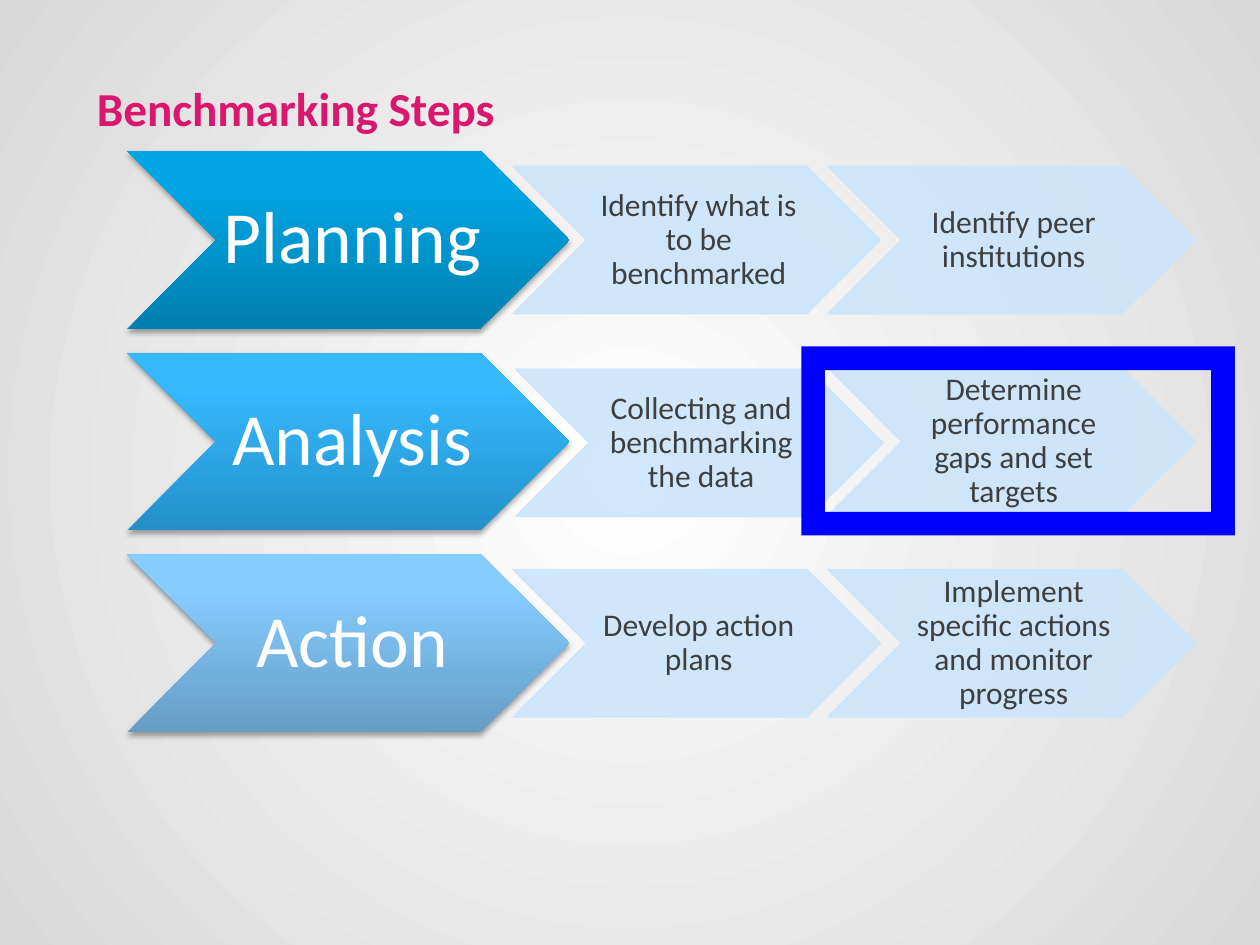
"""Builds the Benchmarking Steps slide: three phases, each leading to two steps."""
from lxml import etree
from pptx import Presentation
from pptx.dml.color import RGBColor
from pptx.enum.shapes import MSO_SHAPE
from pptx.enum.text import MSO_ANCHOR, PP_ALIGN
from pptx.oxml import parse_xml
from pptx.oxml.ns import nsdecls, qn
from pptx.util import Inches, Pt

CHEVRON, FRAME = MSO_SHAPE.CHEVRON, MSO_SHAPE.FRAME
MIDDLE = MSO_ANCHOR.MIDDLE
LEFT, CENTER = PP_ALIGN.LEFT, PP_ALIGN.CENTER

THEME = {
    "font": "Calibri",
    "title": {"size": Pt(27), "color": "D9176E", "bold": True, "wrap": True},
    "phase": {"size": Pt(42), "color": "FFFFFF", "bold": False, "wrap": False},
    "step": {"size": Pt(18), "color": "3F3F3F", "bold": False, "wrap": True},
    "step_fill": "CCE5FB",
    "frame": "0000FF",
    "background": [(0, "FFFFFF"), (100, "D9D9D9")],
}

PHASES = [
    ("Planning", ("007FAF", "00A5E4", "00A6E5"),
     [("Identify what is to be benchmarked", 0, 0), ("Identify peer institutions", 0, 0)]),
    ("Analysis", ("2390C9", "35B9FF", "36BAFF"),
     [("Collecting and benchmarking the data", 0.02, 0.01),
      ("Determine performance gaps and set targets", 0, 0)]),
    ("Action", ("669DC4", "85CCFF", "86CDFF"),
     [("Develop action plans", 0, 0),
      ("Implement specific actions and monitor progress", 0, 0)]),
]

PHASE_LEFT, PHASE_TOP, PHASE_W, PHASE_H, ROW_PITCH = 1.01, 1.2, 3.51, 1.41, 1.6
STEP_LEFT, STEP_W, STEP_H, STEP_PITCH = 4.07, 2.92, 1.17, 2.5


def set_gradient(element, stops, direction):
    """Replace the gradient inside element with the given stops and direction."""
    old = element.find(".//" + qn("a:gradFill"))
    stop_xml = "".join(
        f'<a:gs pos="{pos * 1000}"><a:srgbClr val="{color}"/></a:gs>' for pos, color in stops)
    new = parse_xml(f'<a:gradFill {nsdecls("a")} rotWithShape="1">'
                    f"<a:gsLst>{stop_xml}</a:gsLst>{direction}</a:gradFill>")
    old.getparent().replace(old, new)


def write(sp, text, style, align, spacing, margins):
    """Write one styled paragraph into a shape or text box."""
    tf = sp.text_frame
    frame_format = {"word_wrap": style["wrap"], "vertical_anchor": MIDDLE}
    sides = ("margin_left", "margin_top", "margin_right", "margin_bottom")
    frame_format.update(zip(sides, map(Inches, margins)))
    for name, value in frame_format.items():
        setattr(tf, name, value)
    p = tf.paragraphs[0]
    p.alignment, p.line_spacing = align, spacing
    r = p.add_run()
    r.text = text
    font_format = {"name": THEME["font"], "size": style["size"], "bold": style["bold"]}
    for name, value in font_format.items():
        setattr(r.font, name, value)
    r.font.color.rgb = RGBColor.from_string(style["color"])


prs = Presentation()
prs.slide_width, prs.slide_height = Inches(10), Inches(7.5)
s = prs.slides.add_slide(prs.slide_layouts[6])
s.background.fill.gradient()
set_gradient(s.element, THEME["background"],
             '<a:path path="circle"><a:fillToRect l="50000" t="50000" r="50000" b="50000"/></a:path>')

for row, (phase, colors, steps) in enumerate(PHASES):
    top = PHASE_TOP + row * ROW_PITCH
    sp = s.shapes.add_shape(CHEVRON, Inches(PHASE_LEFT), Inches(top),
                            Inches(PHASE_W), Inches(PHASE_H))
    sp.fill.gradient()
    set_gradient(sp.element, zip((0, 80, 100), colors), '<a:lin ang="16200000" scaled="0"/>')
    sp.line.fill.background()
    sp.shadow.inherit = False
    sp.element.spPr.find(qn("a:effectLst")).append(parse_xml(
        f'<a:outerShdw {nsdecls("a")} blurRad="{Pt(3.1)}" dist="{Pt(1.8)}" dir="5400000" '
        'rotWithShape="0"><a:srgbClr val="000000"><a:alpha val="35000"/></a:srgbClr></a:outerShdw>'))
    write(sp, phase, THEME["phase"], CENTER, 0.9, (0.06, 0.03, 0, 0.03))

    step_top = top + (PHASE_H - STEP_H) / 2
    for col, (step, dx, dy) in enumerate(steps):
        sp = s.shapes.add_shape(CHEVRON, Inches(STEP_LEFT + col * STEP_PITCH + dx),
                                Inches(step_top + dy), Inches(STEP_W), Inches(STEP_H))
        sp.shadow.inherit = False
        sp.line.width = Pt(0.75)
        for fill in (sp.fill, sp.line.fill):
            fill.solid()
            fill.fore_color.rgb = RGBColor.from_string(THEME["step_fill"])
        for color in sp.element.spPr.iter(qn("a:srgbClr")):
            etree.SubElement(color, qn("a:alpha")).set("val", "90000")
        write(sp, step, THEME["step"], CENTER, 0.9, (0.03, 0.01, 0, 0.01))

title = s.shapes.add_textbox(Inches(0.67), Inches(0.17), Inches(9.17), Inches(1.37))
write(title, "Benchmarking Steps", THEME["title"], LEFT, 1.0, (0.1, 0.05, 0.1, 0.05))

highlight = s.shapes.add_shape(FRAME, Inches(6.36), Inches(2.75), Inches(3.44), Inches(1.5))
highlight.shadow.inherit = False
highlight.fill.solid()
highlight.fill.fore_color.rgb = RGBColor.from_string(THEME["frame"])
highlight.line.fill.background()

prs.save("out.pptx")
